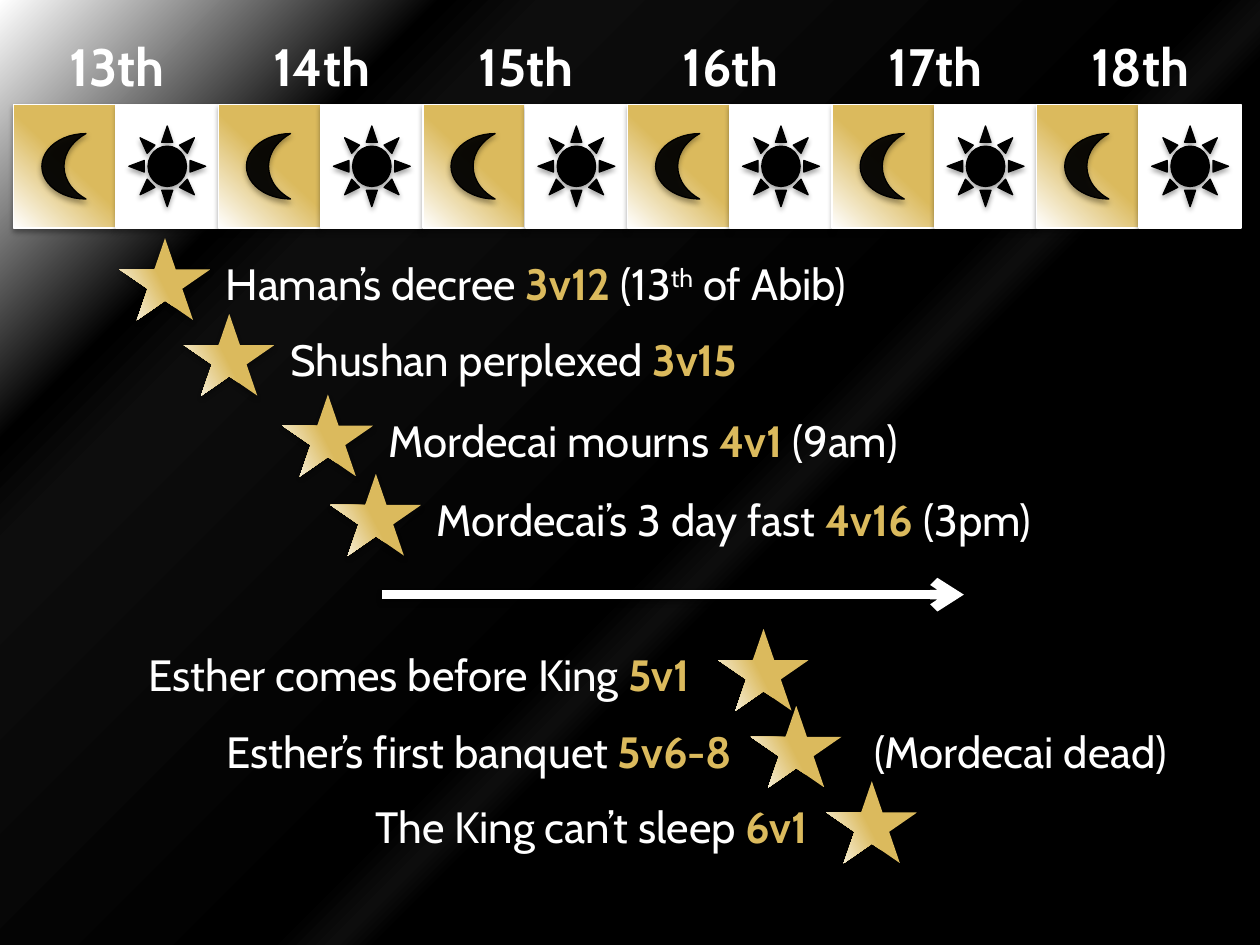
"""Build the timeline slide of the Esther events, 13th to 18th of Abib."""
import pptx
import pptx.dml.color
import pptx.enum.shapes
import pptx.enum.text
import pptx.oxml
import pptx.oxml.ns
import pptx.util

Pt = pptx.util.Pt
RGBColor = pptx.dml.color.RGBColor
SHAPE = pptx.enum.shapes.MSO_SHAPE
ALIGN = pptx.enum.text.PP_ALIGN

GOLD = RGBColor(0xDB, 0xBA, 0x5D)
WHITE = RGBColor(0xFF, 0xFF, 0xFF)
BLACK = RGBColor(0, 0, 0)
SOOT = RGBColor(0x0D, 0x0D, 0x0D)
FONT = "Cabin"

DAYS = ["13th", "14th", "15th", "16th", "17th", "18th"]
PLAIN, VERSE, RAISED = "plain", "verse", "raised"
EVENTS_TEXT_RIGHT = [
    (68.4, 136.1, 528.5, [("Haman’s decree ", PLAIN), ("3v12 ", VERSE), ("(13", PLAIN),
                          ("th", RAISED), (" of Abib)", PLAIN)]),
    (105.1, 179.3, 313.9, [("Shushan perplexed ", PLAIN), ("3v15", VERSE)]),
    (161.5, 225.4, 347, [("Mordecai mourns ", PLAIN), ("4v1 ", VERSE), ("(9am)", PLAIN)]),
    (188.9, 270.7, 391.7, [("Mordecai’s 3 day fast ", PLAIN), ("4v16 ", VERSE), ("(3pm)", PLAIN)]),
]
EVENTS_TEXT_LEFT = [
    (410.4, 359.3, 406.8, [("Esther comes before King ", PLAIN), ("5v1 ", VERSE)]),
    (429.1, 403.2, 347, [("Esther’s first banquet ", PLAIN), ("5v6-8", VERSE)]),
    (472.3, 446.4, 347, [("The King can’t sleep ", PLAIN), ("6v1", VERSE)]),
]
BACKDROP_STOPS = [(21, BLACK), (40, BLACK), (42, SOOT), (45, BLACK),
                  (75, SOOT), (80, BLACK), (100, WHITE)]

GRID_LEFT, GRID_TOP = 7.92, 59.8
CELL_STEP, CELL_WIDTH, CELL_HEIGHT = 58.45, 58.4, 70.5
MOON_WIDTH, MOON_HEIGHT, MOON_INSET = 25.2, 37.4, 16
SUN_WIDTH, SUN_HEIGHT = 43.9, 46.1
STAR_WIDTH, STAR_HEIGHT = 51.8, 46.8
TEXT_HEIGHT, TEXT_DROP = 37.4, 7.2


def set_gradient(fill, element, stops, direction):
    """Give a fill the stops and the a:lin or a:path direction."""
    fill.gradient()
    gradient = element.xpath(".//a:gradFill")[0]
    for child in list(gradient):
        gradient.remove(child)
    colours = "".join(f'<a:gs pos="{place * 1000}"><a:srgbClr val="{colour}"/></a:gs>'
                      for place, colour in stops)
    namespace = pptx.oxml.ns.nsdecls("a")
    gradient.append(pptx.oxml.parse_xml(f"<a:gsLst {namespace}>{colours}</a:gsLst>"))
    gradient.append(pptx.oxml.parse_xml(direction.replace(" ", f" {namespace} ", 1)))


def add_shadow(element, alpha, distance):
    """Put a soft shadow straight below a shape or connector."""
    properties = element.spPr
    for effects in properties.xpath("a:effectLst"):
        properties.remove(effects)
    properties.append(pptx.oxml.parse_xml(
        f'<a:effectLst {pptx.oxml.ns.nsdecls("a")}><a:outerShdw blurRad="{Pt(3.1)}" '
        f'dist="{Pt(distance)}" dir="5400000" rotWithShape="0"><a:srgbClr val="{BLACK}">'
        f'<a:alpha val="{alpha * 1000}"/></a:srgbClr></a:outerShdw></a:effectLst>'))


def add_figure(slide, kind, left, top, width, height, colour=None, line=None, fade=None):
    """Add a shadowed shape, plain or fading from gold to white by (stop, angle)."""
    shape = slide.shapes.add_shape(kind, Pt(left), Pt(top), Pt(width), Pt(height))
    if fade:
        start, angle = fade
        set_gradient(shape.fill, shape.element, [(start, GOLD), (100, WHITE)],
                     f'<a:lin ang="{angle * 60000}" scaled="0"/>')
    else:
        shape.fill.solid()
        shape.fill.fore_color.rgb = colour
    if line is None:
        shape.line.fill.background()
    else:
        shape.line.color.rgb = line
        shape.line.width = Pt(0.75)
    shape.shadow.inherit = False
    add_shadow(shape.element, 35, 1.8)
    return shape


def add_text(slide, left, top, width, height, parts, size, align=ALIGN.LEFT, bold=False):
    """Add one line of text made of (words, style) parts."""
    box = slide.shapes.add_textbox(Pt(left), Pt(top), Pt(width), Pt(height))
    frame = box.text_frame
    frame.word_wrap = True
    frame.auto_size = pptx.enum.text.MSO_AUTO_SIZE.SHAPE_TO_FIT_TEXT
    paragraph = frame.paragraphs[0]
    paragraph.alignment = align
    paragraph.font.name = FONT
    paragraph.font.size = Pt(size)
    for words, style in parts:
        run = paragraph.add_run()
        run.text = words
        run.font.bold = bold or style == VERSE
        run.font.color.rgb = GOLD if style == VERSE else WHITE
        if style == RAISED:
            run.font._element.set("baseline", "30000")


def add_day(slide, index, day):
    """Add a day's label with its night and daylight cells."""
    night = GRID_LEFT + 2 * index * CELL_STEP
    daylight = night + CELL_STEP
    middle = GRID_TOP + CELL_HEIGHT / 2
    add_text(slide, night + 14.4, 15.8, 89.3, 43.9, [(day, PLAIN)], 30, ALIGN.CENTER, True)
    add_figure(slide, SHAPE.RECTANGLE, night, GRID_TOP, CELL_WIDTH, CELL_HEIGHT,
               line=WHITE, fade=(47, 133))
    add_figure(slide, SHAPE.RECTANGLE, daylight, GRID_TOP, CELL_WIDTH, CELL_HEIGHT, WHITE, WHITE)
    moon = add_figure(slide, SHAPE.MOON, night + MOON_INSET, middle - MOON_HEIGHT / 2,
                      MOON_WIDTH, MOON_HEIGHT, BLACK, BLACK)
    colour = moon.element.spPr.xpath("a:solidFill/a:srgbClr")[0]
    colour.append(pptx.oxml.parse_xml(f'<a:alpha {pptx.oxml.ns.nsdecls("a")} val="93000"/>'))
    add_figure(slide, SHAPE.SUN, daylight + (CELL_WIDTH - SUN_WIDTH) / 2,
               middle - SUN_HEIGHT / 2, SUN_WIDTH, SUN_HEIGHT, BLACK, BLACK)


def add_event(slide, star_left, star_top, width, parts, text_on_left):
    """Add a star with its event text on one side."""
    add_figure(slide, SHAPE.STAR_5_POINT, star_left, star_top, STAR_WIDTH, STAR_HEIGHT,
               fade=(53, 153))
    left = star_left - 3.6 - width if text_on_left else star_left + 53.6
    add_text(slide, left, star_top + TEXT_DROP, width, TEXT_HEIGHT, parts, 25,
             ALIGN.RIGHT if text_on_left else ALIGN.LEFT)


def add_fast_arrow(slide):
    """Add the arrow that spans the three day fast."""
    arrow = slide.shapes.add_connector(pptx.enum.shapes.MSO_CONNECTOR.STRAIGHT,
                                       Pt(218.2), Pt(339.8), Pt(550.8), Pt(339.8))
    arrow.line.color.rgb = WHITE
    arrow.line.width = Pt(5.5)
    arrow.element.spPr.xpath("a:ln")[0].append(pptx.oxml.parse_xml(
        f'<a:tailEnd {pptx.oxml.ns.nsdecls("a")} type="arrow"/>'))
    add_shadow(arrow.element, 38, 1.6)


def main():
    """Build and save the slide."""
    presentation = pptx.Presentation()
    presentation.slide_width, presentation.slide_height = Pt(720), Pt(540)
    slide = presentation.slides.add_slide(presentation.slide_layouts[6])
    set_gradient(slide.background.fill, slide.element, BACKDROP_STOPS,
                 '<a:path path="circle"><a:fillToRect l="100000" t="100000"/></a:path>')
    add_fast_arrow(slide)
    for index, day in enumerate(DAYS):
        add_day(slide, index, day)
    for event in EVENTS_TEXT_RIGHT:
        add_event(slide, *event, text_on_left=False)
    for event in EVENTS_TEXT_LEFT:
        add_event(slide, *event, text_on_left=True)
    add_text(slide, 492.5, 410.4, 203, TEXT_HEIGHT, [("(Mordecai dead)", PLAIN)], 25)
    presentation.save("out.pptx")


if __name__ == "__main__":
    main()
